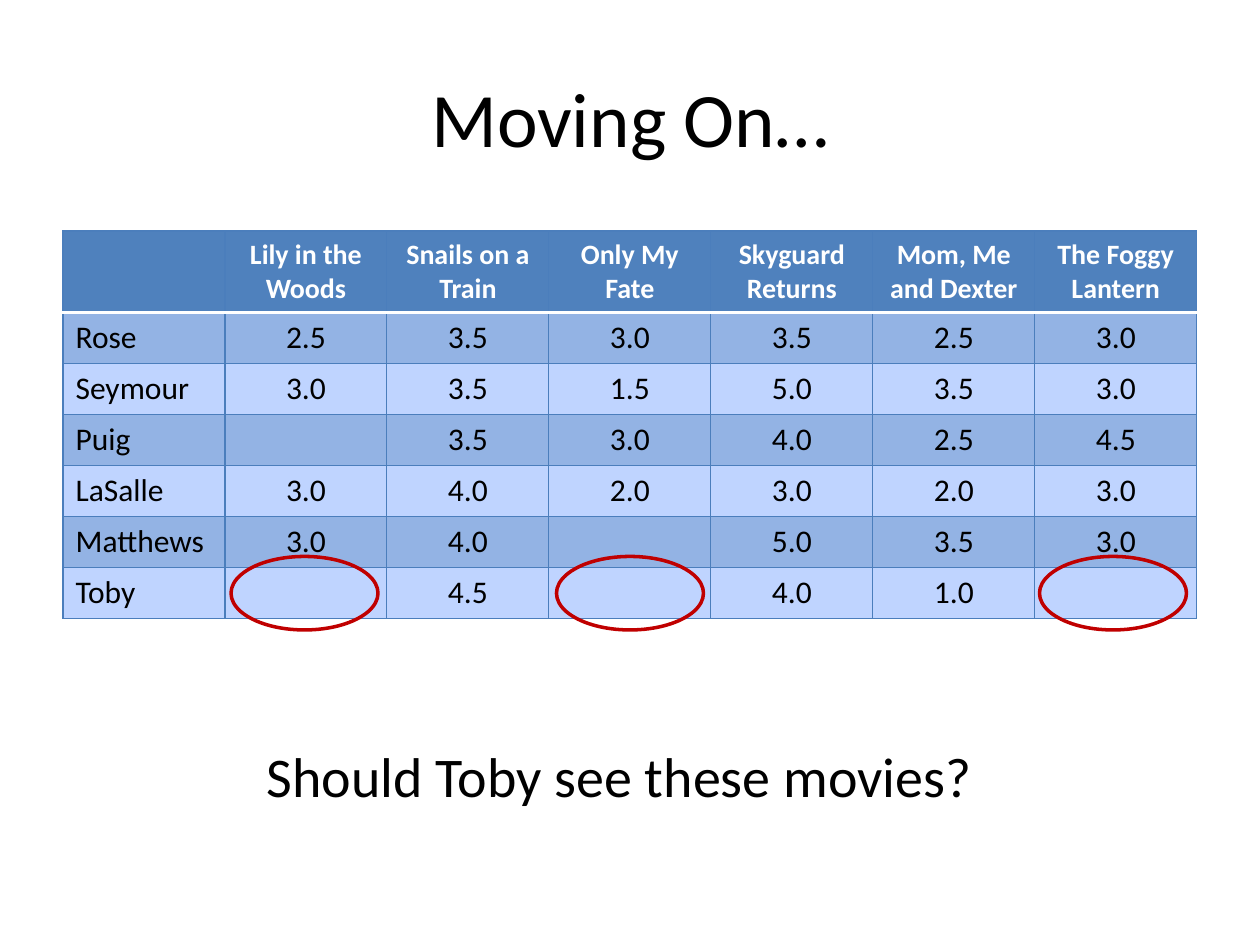
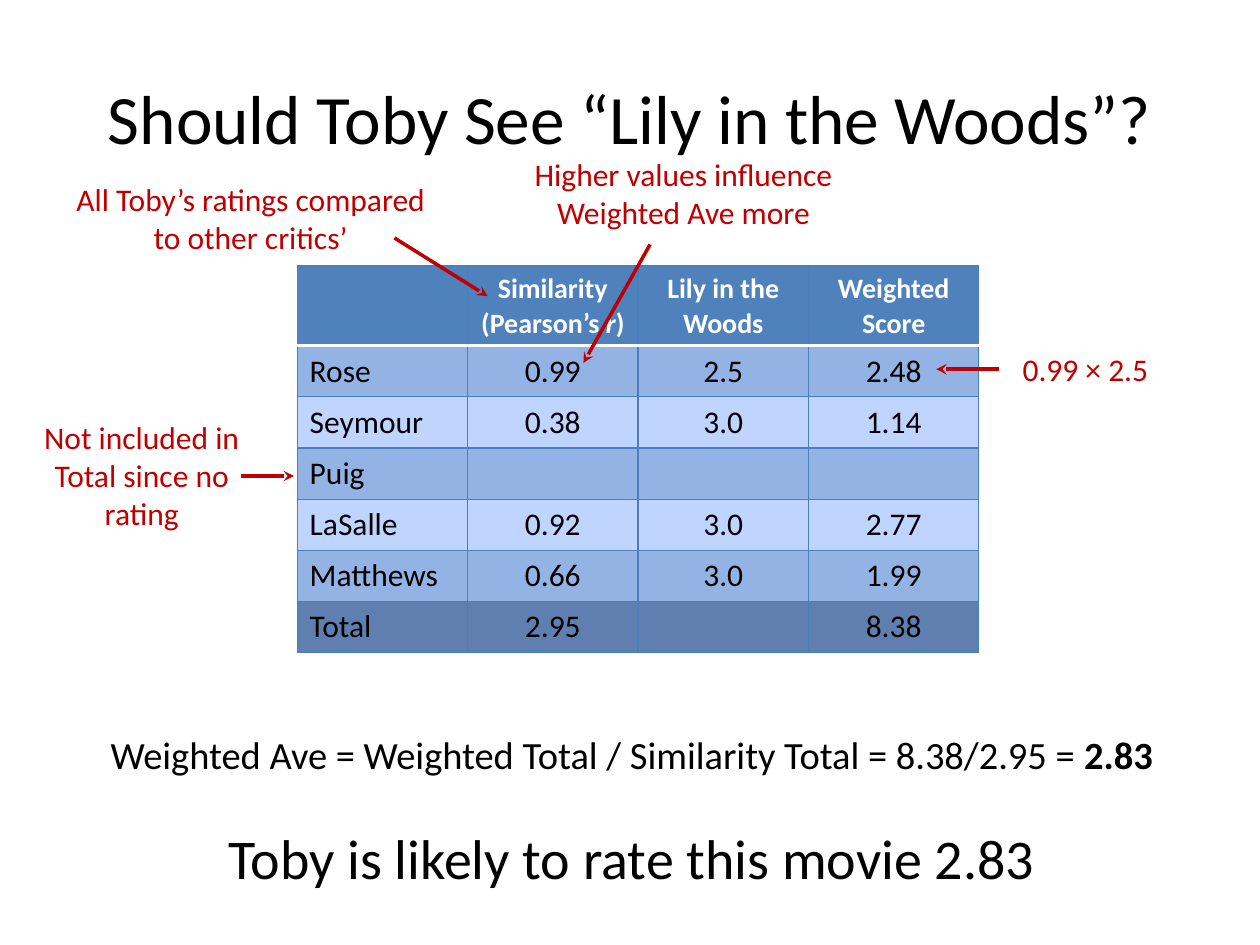
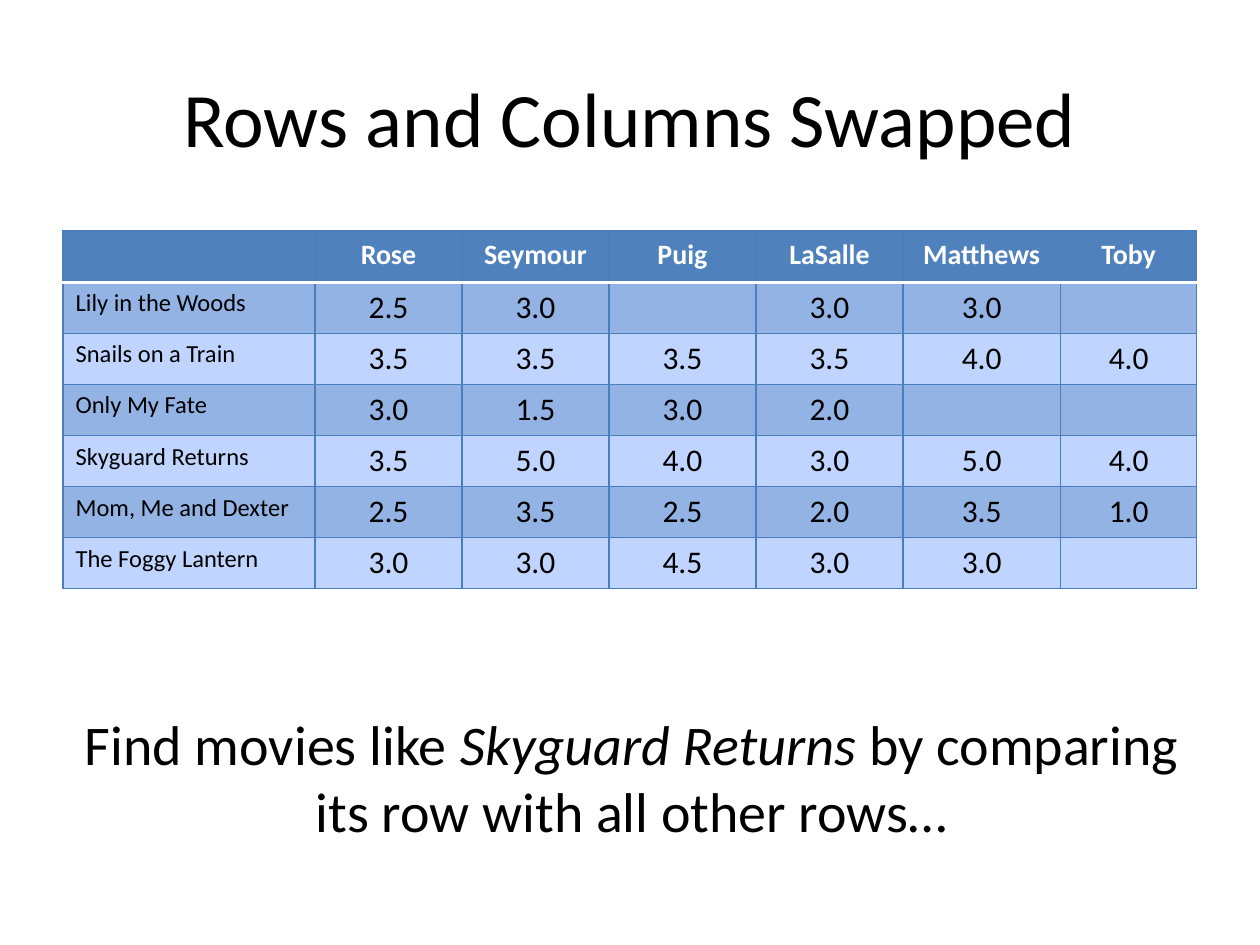
from dataclasses import dataclass

from lxml.etree import SubElement
from pptx import Presentation
from pptx.dml.color import RGBColor
from pptx.enum.shapes import MSO_CONNECTOR as Conn, MSO_SHAPE as Shp
from pptx.enum.text import MSO_ANCHOR as Anchor, MSO_AUTO_SIZE as Auto, PP_ALIGN as Align
from pptx.oxml.ns import qn
from pptx.util import Pt

FONT = "Calibri"
BLACK, WHITE, RED = "000000", "FFFFFF", "C00000"
HEADER, GRID, DARK_BAND, LIGHT_BAND, TOTAL = "4F81BD", "4B7EBC", "93B3E4", "BFD4FF", "5E7FAF"
ROW_HEIGHT = 29.2


@dataclass
class Run:
    """A stretch of text with its emphasis."""
    text: str
    bold: bool = False
    italic: bool = False


@dataclass
class Para:
    """A paragraph of runs in one size."""
    runs: list[Run]
    size: float
    color: str = BLACK
    before: float = 0
    align: Align = Align.CENTER


@dataclass
class Box:
    """A place on the slide, in points."""
    left: float
    top: float
    width: float
    height: float


@dataclass
class Grid:
    """A ratings table with its column widths."""
    left: float
    top: float
    widths: list[float]
    head: list[list[Run]]
    rows: list[str]
    label_size: float = 18
    has_total: bool = False


@dataclass
class Note:
    """A red remark and the arrow that leads from it."""
    text: str
    box: Box
    start: tuple[float, float]
    end: tuple[float, float]


def rgb(value: str) -> RGBColor:
    """Turn a hex string into a colour."""
    return RGBColor.from_string(value)


def heads(*titles: str) -> list[list[Run]]:
    """Make bold header cells from plain titles."""
    return [[Run(t, bold=True)] for t in titles]


def write(tf, paras: list[Para]) -> None:
    """Fill a text frame with paragraphs."""
    for i, para in enumerate(paras):
        p = tf.add_paragraph() if i else tf.paragraphs[0]
        for name, value in {"alignment": para.align, "space_before": Pt(para.before)}.items():
            setattr(p, name, value)
        for run in para.runs:
            for j, line in enumerate(run.text.split("\n")):
                if j:
                    p.add_line_break()
                r = p.add_run()
                r.text = line
                style = {"name": FONT, "size": Pt(para.size), "bold": run.bold, "italic": run.italic}
                for name, value in style.items():
                    setattr(r.font, name, value)
                r.font.color.rgb = rgb(para.color)


def add_text(s, box: Box, paras: list[Para], anchor: Anchor = Anchor.TOP, fit: Auto = Auto.SHAPE_TO_FIT_TEXT) -> None:
    """Add a wrapping text box."""
    sp = s.shapes.add_textbox(Pt(box.left), Pt(box.top), Pt(box.width), Pt(box.height))
    tf = sp.text_frame
    for name, value in {"word_wrap": True, "auto_size": fit, "vertical_anchor": anchor}.items():
        setattr(tf, name, value)
    write(tf, paras)


def add_title_slide(prs, title: str, size: float = 44):
    """Add a blank slide with a centred title."""
    s = prs.slides.add_slide(prs.slide_layouts[6])
    add_text(s, Box(36, 21.6, 648, 90), [Para([Run(title)], size)], Anchor.MIDDLE, Auto.NONE)
    return s


def add_border(cell, side: str, color: str, width: float) -> None:
    """Draw one edge of a table cell."""
    ln = SubElement(cell._tc.get_or_add_tcPr(), qn(f"a:ln{side}"), w=str(Pt(width)))
    SubElement(SubElement(ln, qn("a:solidFill")), qn("a:srgbClr"), val=color)


def add_cell(cell, para: Para, fill: str, white_edge: str) -> None:
    """Set the edges, fill and text of a table cell."""
    for side in "LRTB":
        add_border(cell, side, *((WHITE, 2) if side == white_edge else (GRID, 0.75)))
    cell.fill.solid()
    cell.fill.fore_color.rgb = rgb(fill)
    write(cell.text_frame, [para])


def add_grid(s, grid: Grid) -> None:
    """Add a banded table with a header row."""
    body = [[[Run(t)] for t in row.split("|")] for row in grid.rows]
    count = len(body) + 1
    table = s.shapes.add_table(count, len(grid.widths), Pt(grid.left), Pt(grid.top),
                               Pt(sum(grid.widths)), Pt(ROW_HEIGHT * count)).table
    for name in ("first_row", "horz_banding"):
        setattr(table, name, False)
    for column, width in zip(table.columns, grid.widths):
        column.width = Pt(width)
    for i, row in enumerate([heads("") + grid.head] + body):
        table.rows[i].height = Pt(ROW_HEIGHT)
        fill = HEADER if i == 0 else DARK_BAND if i % 2 else LIGHT_BAND
        if grid.has_total and i == count - 1:
            fill = TOTAL
        for j, runs in enumerate(row):
            if i == 0:
                para = Para(runs, 16, WHITE)
            elif j == 0:
                para = Para(runs, grid.label_size, align=Align.LEFT)
            else:
                para = Para(runs, 18)
            add_cell(table.cell(i, j), para, fill, {0: "B", 1: "T"}.get(i, ""))


def add_ring(s, box: Box) -> None:
    """Circle a missing rating in red."""
    sp = s.shapes.add_shape(Shp.OVAL, Pt(box.left), Pt(box.top), Pt(box.width), Pt(box.height))
    sp.shadow.inherit = False
    sp.fill.background()
    sp.line.color.rgb = rgb(RED)
    sp.line.width = Pt(2)


def add_note(s, note: Note) -> None:
    """Add a remark with its arrow."""
    add_text(s, note.box, [Para([Run(note.text)], 18, RED)])
    c = s.shapes.add_connector(Conn.STRAIGHT, *(Pt(v) for v in note.start + note.end))
    c.line.color.rgb = rgb(RED)
    c.line.width = Pt(2)
    props = c._element.spPr
    SubElement(props.find(qn("a:ln")), qn("a:tailEnd"), type="stealth")
    SubElement(props, qn("a:effectLst"))


RATINGS = Grid(
    36, 132, [92.57] * 7,
    heads("Lily in the Woods", "Snails on a Train", "Only My Fate",
          "Skyguard Returns", "Mom, Me and Dexter", "The Foggy Lantern"),
    ["Rose|2.5|3.5|3.0|3.5|2.5|3.0",
     "Seymour|3.0|3.5|1.5|5.0|3.5|3.0",
     "Puig||3.5|3.0|4.0|2.5|4.5",
     "LaSalle|3.0|4.0|2.0|3.0|2.0|3.0",
     "Matthews|3.0|4.0||5.0|3.5|3.0",
     "Toby||4.5||4.0|1.0|"])

SCORES = Grid(
    169.8, 152, [97.4] * 4,
    [[Run("Similarity\n(Pearson’s ", True), Run("r", True, True), Run(")", True)],
     *heads("Lily in the Woods", "Weighted Score")],
    ["Rose|0.99|2.5|2.48",
     "Seymour|0.38|3.0|1.14",
     "Puig|||",
     "LaSalle|0.92|3.0|2.77",
     "Matthews|0.66|3.0|1.99",
     "Total|2.95||8.38"],
    has_total=True)

SWAPPED = Grid(
    36, 132, [144, 84, 84, 84, 84, 90, 78],
    heads("Rose", "Seymour", "Puig", "LaSalle", "Matthews", "Toby"),
    ["Lily in the Woods|2.5|3.0||3.0|3.0|",
     "Snails on a Train|3.5|3.5|3.5|3.5|4.0|4.0",
     "Only My Fate|3.0|1.5|3.0|2.0||",
     "Skyguard Returns|3.5|5.0|4.0|3.0|5.0|4.0",
     "Mom, Me and Dexter|2.5|3.5|2.5|2.0|3.5|1.0",
     "The Foggy Lantern|3.0|3.0|4.5|3.0|3.0|"],
    label_size=14)

NOTES = [
    Note("Not included in Total since no rating", Box(18, 235.5, 126, 72.7), (138, 272), (168, 272)),
    Note("All Toby’s ratings compared to other critics’", Box(33.8, 99.4, 219, 51), (225.4, 136), (278.6, 169.2)),
    Note("0.99 × 2.5", Box(563, 196.6, 114.5, 29), (571, 211), (535, 211)),
    Note("Higher values influence Weighted Ave more", Box(274.3, 85, 232.6, 51), (371.5, 139.7), (333.4, 207.4)),
]


def main() -> None:
    """Build the three slides."""
    prs = Presentation()
    prs.slide_width, prs.slide_height = Pt(720), Pt(540)

    s = add_title_slide(prs, "Moving On…")
    add_grid(s, RATINGS)
    for left in (132, 318, 594):
        add_ring(s, Box(left, 318, 84, 42))
    add_text(s, Box(123, 420, 462, 46), [Para([Run("Should Toby see these movies?")], 32)])

    s = add_title_slide(prs, "Should Toby See “Lily in the Woods”?", 39.6)
    add_grid(s, SCORES)
    add_text(s, Box(34, 414, 654, 99.4), [
        Para([Run("Weighted Ave = Weighted Total / Similarity Total = 8.38/2.95 = "), Run("2.83", True)], 22),
        Para([Run("Toby is likely to rate this movie 2.83")], 32, before=26.8)])
    for note in NOTES:
        add_note(s, note)

    s = add_title_slide(prs, "Rows and Columns Swapped")
    add_grid(s, SWAPPED)
    add_text(s, Box(34, 402, 654, 85), [Para([
        Run("Find movies like "), Run("Skyguard Returns ", italic=True),
        Run("by comparing its row with all other rows…")], 32)])

    prs.save("out.pptx")


if __name__ == "__main__":
    main()
